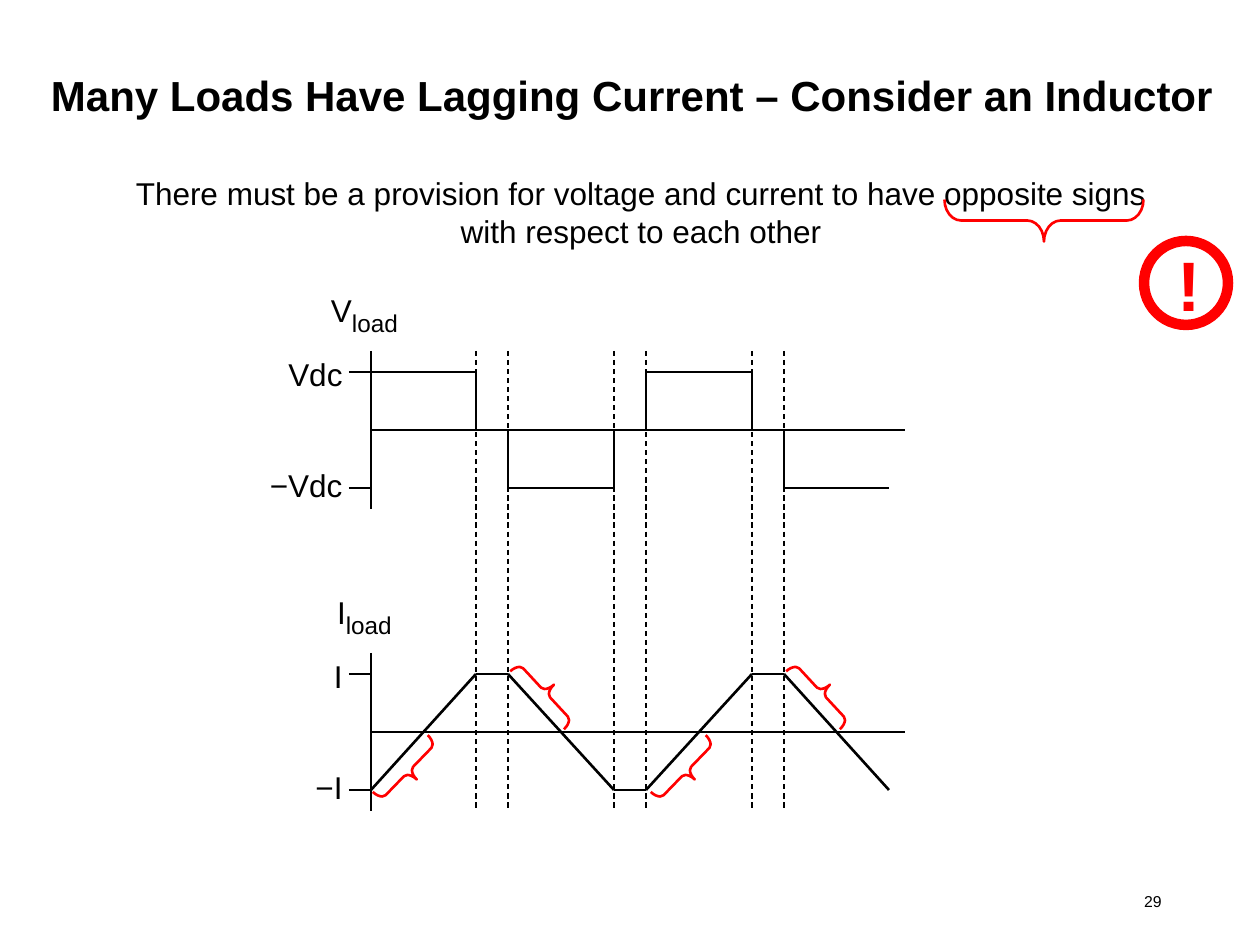
import dataclasses
import itertools
import pptx
import pptx.util
import pptx.dml.color
import pptx.enum.dml
import pptx.enum.shapes
import pptx.enum.text
import pptx.oxml.ns
import lxml.etree

SCALE = 914400 / 126
ALIGN = pptx.enum.text.PP_ALIGN
ANCHOR = pptx.enum.text.MSO_ANCHOR
SHAPE = pptx.enum.shapes.MSO_SHAPE


@dataclasses.dataclass(frozen=True)
class Theme:
    font: str = "Arial"
    ink: str = "000000"
    alert: str = "FF0000"
    title: int = 24
    body: int = 18
    sub: int = 24
    mark: int = 40
    page: int = 9
    thin: float = 0.75
    thick: float = 1.5
    ring: int = 6


THEME = Theme()
TIMES = [371, 476, 508, 614, 646, 752, 784, 889]
VOLTS = [1, 0, -1, 0, 1, 0, -1]
AMPS = [-1, 1, 1, -1, -1, 1, 1, -1]
SWING = 58
REACH = 79
VMID = 430
IMID = 732


def px(*nums):
    return [pptx.util.Emu(round(n * SCALE)) for n in nums]


def color(code):
    return pptx.dml.color.RGBColor.from_string(code)


def style(box, size, align, code=THEME.ink, bold=False, anchor=ANCHOR.TOP, wrap=True):
    frame = box.text_frame
    frame.auto_size = pptx.enum.text.MSO_AUTO_SIZE.NONE
    frame.word_wrap = wrap
    frame.vertical_anchor = anchor
    para = frame.paragraphs[0]
    para.alignment = align
    para.space_before = pptx.util.Pt(0)
    font = para.font
    font.name = THEME.font
    font.size = pptx.util.Pt(size)
    font.bold = bold
    font.color.rgb = color(code)


def label(shapes, text, place, size, align, **look):
    box = shapes.add_textbox(*px(*place))
    box.text_frame.text = text
    style(box, size, align, **look)
    return box


def fill(slot, text, place, size, bold=False):
    slot.left, slot.top, slot.width, slot.height = px(*place)
    slot.text_frame.text = text
    props = slot.text_frame.paragraphs[0]._p.get_or_add_pPr()
    props.set("marL", "0")
    props.set("indent", "0")
    lxml.etree.SubElement(props, pptx.oxml.ns.qn("a:buNone"))
    style(slot, size, ALIGN.CENTER, bold=bold)


def line(shapes, start, end, width, dash=False):
    kind = pptx.enum.shapes.MSO_CONNECTOR.STRAIGHT
    link = shapes.add_connector(kind, *px(*start, *end))
    link.line.color.rgb = color(THEME.ink)
    link.line.width = pptx.util.Pt(width)
    if dash:
        link.line.dash_style = pptx.enum.dml.MSO_LINE.DASH
    lxml.etree.SubElement(link._element.spPr, pptx.oxml.ns.qn("a:effectLst"))


def trace(shapes, points):
    for start, end in itertools.pairwise(points):
        line(shapes, start, end, THEME.thick)


def shape(shapes, kind, place, width):
    item = shapes.add_shape(kind, *px(*place))
    item.shadow.inherit = False
    item.fill.background()
    item.line.color.rgb = color(THEME.alert)
    item.line.width = pptx.util.Pt(width)
    return item


def brace(shapes, place, turn, curve=0.286, flip=False):
    item = shape(shapes, SHAPE.LEFT_BRACE, place, THEME.thick)
    item.adjustments[0] = curve
    item.rotation = turn
    if flip:
        item._element.spPr.xfrm.set("flipH", "1")


def graph(shapes, name, high, mid):
    left = TIMES[0]
    line(shapes, (left, mid - REACH), (left, mid + REACH), THEME.thin)
    line(shapes, (left, mid), (905, mid), THEME.thin)
    for text, rise, drop in ((high, -SWING, -81), ("−" + high, SWING, 30)):
        line(shapes, (349, mid + rise), (left, mid + rise), THEME.thick)
        label(shapes, text, (254, mid + drop, 101, 50), THEME.body, ALIGN.RIGHT)
    box = label(shapes, name, (296, mid - 156, 137, 50), THEME.body, ALIGN.CENTER)
    run = box.text_frame.paragraphs[0].add_run()
    run.text = "load"
    run.font.size = pptx.util.Pt(THEME.sub)
    run._r.get_or_add_rPr().set("baseline", "-25000")


def alert(shapes):
    group = shapes.add_group_shape().shapes
    label(group, "!", (1165, 235, 49, 97), THEME.mark, ALIGN.LEFT,
          code=THEME.alert, bold=True, wrap=False)
    shape(group, SHAPE.OVAL, (1144, 241, 84, 84), THEME.ring)


def main():
    deck = pptx.Presentation()
    deck.slide_width, deck.slide_height = px(1260, 945)
    slide = deck.slides.add_slide(deck.slide_layouts[1])
    shapes = slide.shapes
    fill(shapes.title, "Many Loads Have Lagging Current – Consider an Inductor",
         (26, 63, 1212, 63), THEME.title, True)
    fill(slide.placeholders[1],
         "There must be a provision for voltage and current to have "
         "opposite signs with respect to each other",
         (96, 168, 1090, 88), THEME.body)
    graph(shapes, "V", "Vdc", VMID)
    graph(shapes, "I", "I", IMID)
    for x in TIMES[1:-1]:
        line(shapes, (x, VMID - REACH), (x, IMID + REACH), THEME.thin, True)
    spans = zip(itertools.pairwise(TIMES), VOLTS)
    trace(shapes, [(x, VMID - SWING * v) for ends, v in spans for x in ends])
    trace(shapes, [(x, IMID - SWING * a) for x, a in zip(TIMES, AMPS)])
    for x in (397, 675):
        brace(shapes, (x, IMID, 23, REACH), 224.1)
    for x in (534, 810):
        brace(shapes, (x, IMID - REACH, 23, REACH), 317.2, flip=True)
    brace(shapes, (1023, 121, 42, 199), 270, 0.396)
    alert(shapes)
    label(shapes, "29", (890, 876, 284, 50), THEME.page, ALIGN.RIGHT,
          anchor=ANCHOR.MIDDLE)
    deck.save("out.pptx")


if __name__ == "__main__":
    main()
